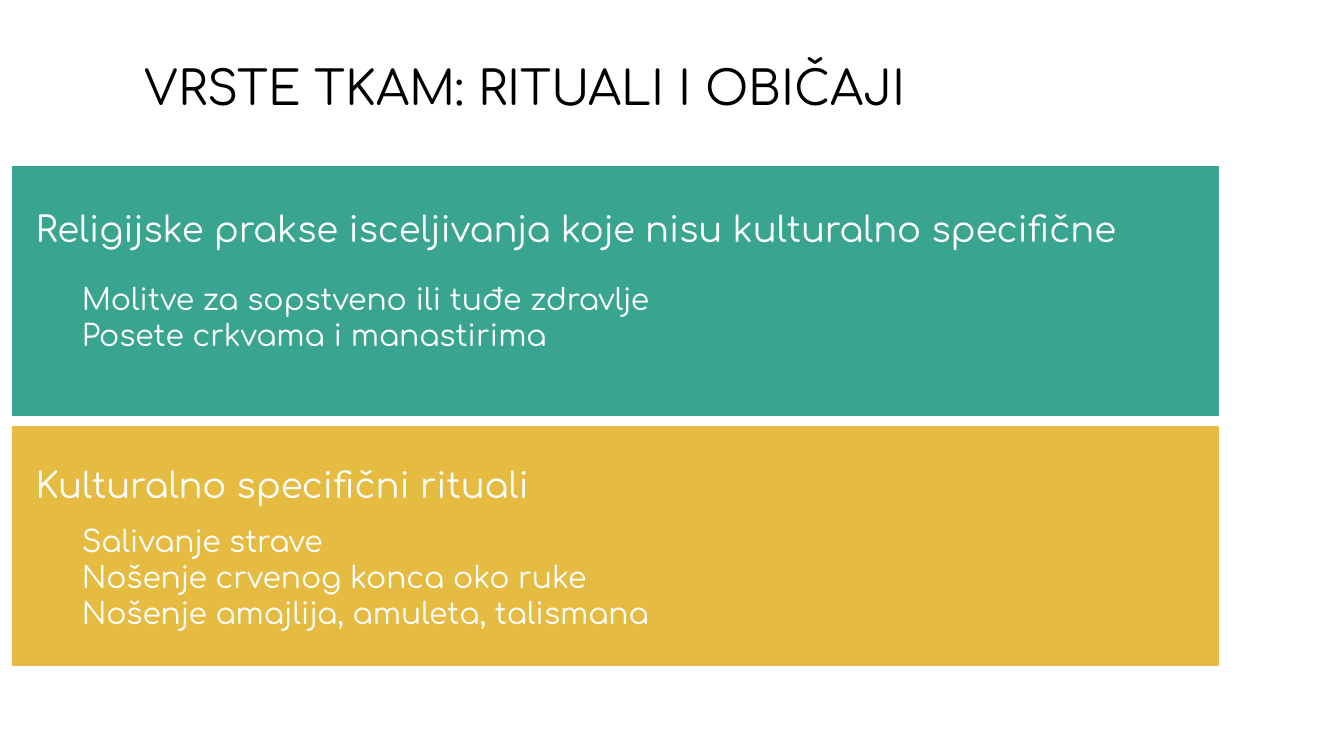
from pptx import Presentation
from pptx import util as u
from pptx.dml.color import RGBColor
from pptx.enum import shapes, text

PX = 9525
FONT = "Comfortaa"
COLORS = {"black": "000000", "white": "FFFFFF", "green": "39A590", "yellow": "E6BB41"}
PANELS = [
    ("green", 119, 178, "Religijske prakse isceljivanja koje nisu kulturalno specifične", 138,
     ["Molitve za sopstveno ili tuđe zdravlje", "Posete crkvama i manastirima"], 191),
    ("yellow", 305, 170, "Kulturalno specifični rituali", 321,
     ["Salivanje strave", "Nošenje crvenog konca oko ruke",
      "Nošenje amajlija, amuleta, talismana"], 364),
]


def px(*lengths):
    """Turn px lengths into EMU."""
    return [u.Emu(n * PX) for n in lengths]


def add_panel(s, box, color):
    """Add a plain coloured rectangle."""
    sp = s.shapes.add_shape(shapes.MSO_SHAPE.RECTANGLE, *px(*box))
    sp.shadow.inherit = False
    sp.fill.solid()
    rgb = RGBColor.from_string(COLORS[color])
    sp.fill.fore_color.rgb = rgb
    sp.line.color.rgb = rgb
    sp.line.width = u.Pt(0.75)


def add_text(s, box, lines, size=16, color="white"):
    """Add a text box with one paragraph for each line."""
    tf = s.shapes.add_textbox(*px(*box)).text_frame
    tf.word_wrap = True
    tf.vertical_anchor = text.MSO_ANCHOR.TOP
    tf.margin_left = tf.margin_top = tf.margin_right = tf.margin_bottom = u.Inches(0.1)
    for i, line in enumerate(lines):
        p = tf.paragraphs[0] if i == 0 else tf.add_paragraph()
        r = p.add_run()
        r.text = line
        r.font.name = FONT
        r.font.size = u.Pt(size)
        r.font.color.rgb = RGBColor.from_string(COLORS[color])


def main():
    """Build the slide and save it."""
    prs = Presentation()
    prs.slide_width, prs.slide_height = px(960, 540)
    s = prs.slides.add_slide(prs.slide_layouts[6])
    add_text(s, (94, 32, 776, 60), ["VRSTE TKAM: RITUALI I OBIČAJI"], size=25.2, color="black")
    for color, top, height, heading, heading_top, items, items_top in PANELS:
        add_panel(s, (9, top, 861, height), color)
        add_text(s, (16, heading_top, 845, 50), [heading], size=19)
        add_text(s, (49, items_top, 768, 97), items)
    prs.save("out.pptx")


if __name__ == "__main__":
    main()
